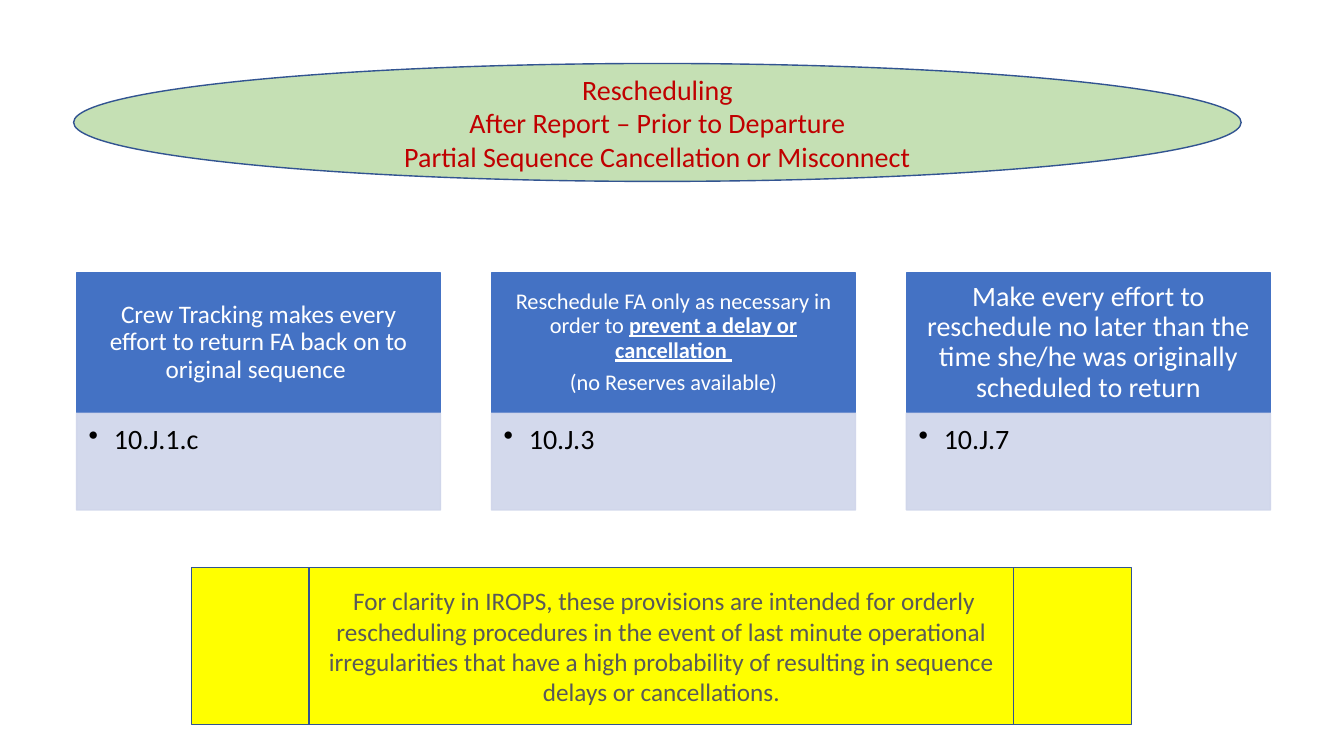
from dataclasses import dataclass

from lxml import etree
from pptx import Presentation
from pptx.dml.color import RGBColor
from pptx.enum.shapes import MSO_SHAPE
from pptx.enum.text import MSO_ANCHOR, PP_ALIGN
from pptx.oxml.ns import qn
from pptx.shapes.autoshape import Shape
from pptx.slide import Slide
from pptx.text.text import _Paragraph
from pptx.util import Inches, Pt

OVAL = MSO_SHAPE.OVAL
RECT = MSO_SHAPE.RECTANGLE
PROCESS = MSO_SHAPE.FLOWCHART_PREDEFINED_PROCESS
CENTER, LEFT = PP_ALIGN.CENTER, PP_ALIGN.LEFT
MIDDLE, TOP = MSO_ANCHOR.MIDDLE, MSO_ANCHOR.TOP


@dataclass(frozen=True)
class Theme:
    font: str = "Calibri"
    green: str = "C5E0B4"
    edge: str = "325491"
    red: str = "C00000"
    blue: str = "4472C4"
    pale: str = "CFD5EA"
    yellow: str = "FFFF00"
    gray: str = "595959"
    white: str = "FFFFFF"
    black: str = "000000"
    large: int = 20
    note: int = 18


@dataclass(frozen=True)
class Box:
    left: float
    top: float
    width: float
    height: float


@dataclass(frozen=True)
class Span:
    text: str
    strong: bool = False
    italic: bool = False


@dataclass(frozen=True)
class Card:
    lines: list[list[Span]]
    size: int
    pad: tuple[float, float, float, float]
    clause: str


THEME = Theme()
BASE_PAD = (0.1, 0.05, 0.1, 0.05)
CLAUSE_PAD = (0.12, 0.12, 0.16, 0.17)
CARD_LEFT, CARD_STEP, CARD_WIDTH = 0.76, 4.115, 3.61
HEAD_TOP, HEAD_HEIGHT = 2.71, 1.38
CLAUSE_TOP, CLAUSE_HEIGHT = 4.1, 0.96

TITLE = [
    [Span("Rescheduling")],
    [Span("After Report – Prior to Departure")],
    [Span("Partial Sequence Cancellation or Misconnect")],
]
CARDS = [
    Card(
        [[Span("Crew Tracking makes every effort to return FA back on to original sequence ")]],
        18, (0.14, 0.08, 0.14, 0.08), "10.J.1.c",
    ),
    Card(
        [
            [
                Span("Reschedule FA only as necessary in order to "),
                Span("prevent a delay or cancellation ", strong=True),
            ],
            [Span("(no Reserves available)")],
        ],
        16, (0.12, 0.07, 0.12, 0.07), "10.J.3",
    ),
    Card(
        [[Span("Make every effort to reschedule no later than the time she/he was "
               "originally scheduled to return")]],
        20, (0.16, 0.09, 0.16, 0.09), "10.J.7",
    ),
]
NOTE = [[
    Span(" ", italic=True),
    Span("For clarity in IROPS, these provisions are intended for orderly rescheduling "
         "procedures in the event of last minute operational irregularities that have a "
         "high probability of resulting in sequence delays or cancellations."),
]]


def add_box(slide: Slide, kind: MSO_SHAPE, box: Box, fill: str, edge: str) -> Shape:
    shape = slide.shapes.add_shape(
        kind, Inches(box.left), Inches(box.top), Inches(box.width), Inches(box.height)
    )
    shape.shadow.inherit = False
    shape.fill.solid()
    shape.fill.fore_color.rgb = RGBColor.from_string(fill)
    shape.line.color.rgb = RGBColor.from_string(edge)
    shape.line.width = Pt(1)
    return shape


def fade(shape: Shape, percent: int) -> None:
    """Set the opacity of both fill and line."""
    for color in shape._element.spPr.iter(qn("a:srgbClr")):
        etree.SubElement(color, qn("a:alpha")).set("val", str(percent * 1000))


def add_bullet(para: _Paragraph) -> None:
    props = para._p.get_or_add_pPr()
    props.set("marL", str(Inches(0.25)))
    props.set("indent", str(-Inches(0.25)))
    etree.SubElement(props, qn("a:buChar")).set("char", "•")


def write(
    shape: Shape,
    lines: list[list[Span]],
    size: int,
    color: str,
    pad: tuple[float, float, float, float] = BASE_PAD,
    align: PP_ALIGN = CENTER,
    anchor: MSO_ANCHOR = MIDDLE,
    spacing: float = 1.0,
    after: float = 0,
) -> None:
    """Fill the shape with text; after is a share of the type size."""
    frame = shape.text_frame
    frame.word_wrap = True
    frame.vertical_anchor = anchor
    frame.margin_left, frame.margin_top, frame.margin_right, frame.margin_bottom = map(Inches, pad)
    for i, line in enumerate(lines):
        para = frame.add_paragraph() if i else frame.paragraphs[0]
        para.alignment = align
        para.line_spacing = spacing
        para.space_after = Pt(size * after)
        for span in line:
            run = para.add_run()
            run.text = span.text
            font = run.font
            font.name, font.size = THEME.font, Pt(size)
            font.color.rgb = RGBColor.from_string(color)
            font.bold = font.underline = span.strong
            font.italic = span.italic


def add_card(slide: Slide, card: Card, left: float) -> None:
    head = add_box(slide, RECT, Box(left, HEAD_TOP, CARD_WIDTH, HEAD_HEIGHT),
                   THEME.blue, THEME.blue)
    write(head, card.lines, card.size, THEME.white, card.pad, spacing=0.9, after=0.35)
    body = add_box(slide, RECT, Box(left, CLAUSE_TOP, CARD_WIDTH, CLAUSE_HEIGHT),
                   THEME.pale, THEME.pale)
    fade(body, 90)
    write(body, [[Span(card.clause)]], THEME.large, THEME.black, CLAUSE_PAD,
          LEFT, TOP, spacing=0.9, after=0.15)
    add_bullet(body.text_frame.paragraphs[0])


def main() -> None:
    deck = Presentation()
    deck.slide_width, deck.slide_height = Inches(13.33), Inches(7.5)
    slide = deck.slides.add_slide(deck.slide_layouts[6])

    title = add_box(slide, OVAL, Box(0.73, 0.63, 11.58, 1.17), THEME.green, THEME.edge)
    write(title, TITLE, THEME.large, THEME.red)
    for i, card in enumerate(CARDS):
        add_card(slide, card, CARD_LEFT + i * CARD_STEP)
    note = add_box(slide, PROCESS, Box(1.9, 5.63, 9.32, 1.56), THEME.yellow, THEME.edge)
    write(note, NOTE, THEME.note, THEME.gray)

    deck.save("out.pptx")


if __name__ == "__main__":
    main()
